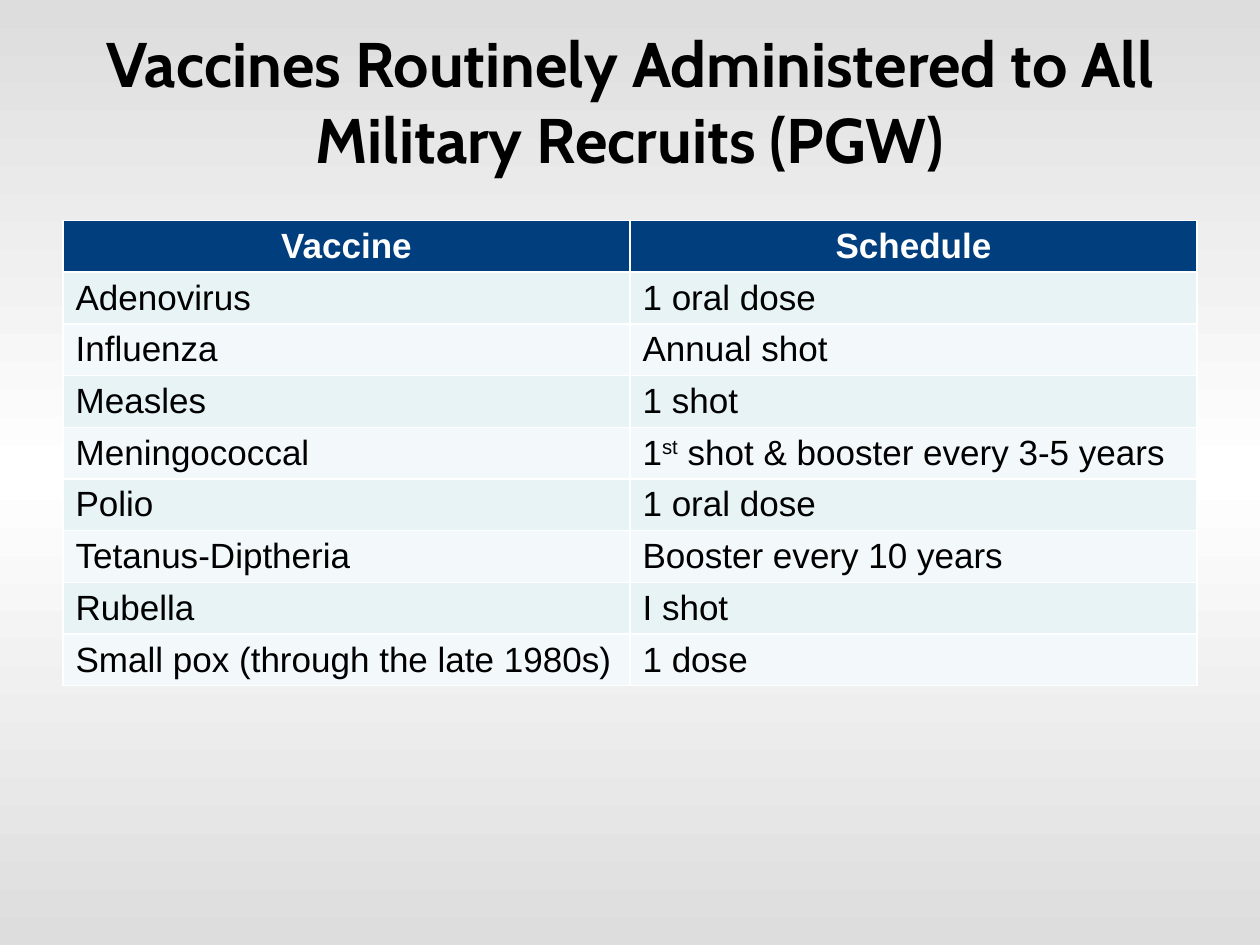
"""Build the slide on vaccines given to military recruits."""
from copy import deepcopy

from pptx import Presentation
from pptx.dml.color import RGBColor
from pptx.enum.text import MSO_ANCHOR as Anchor, PP_ALIGN as Align
from pptx.oxml.ns import qn
from pptx.util import Inches, Pt

TITLE = "Vaccines Routinely Administered to All Military Recruits (PGW)"
ROWS = [
    ("Vaccine", ["Schedule"]),
    ("Adenovirus", ["1 oral dose"]),
    ("Influenza", ["Annual shot"]),
    ("Measles", ["1 shot"]),
    ("Meningococcal", ["1", "st", " shot & booster every 3-5 years"]),
    ("Polio", ["1 oral dose"]),
    ("Tetanus-Diptheria", ["Booster every 10 years"]),
    ("Rubella", ["I shot"]),
    ("Small pox (through the late 1980s)", ["1 dose"]),
]
BLACK = RGBColor(0x00, 0x00, 0x00)
WHITE = RGBColor(0xFF, 0xFF, 0xFF)
GRAY = RGBColor(0xDD, 0xDD, 0xDD)
NAVY = RGBColor(0x00, 0x3E, 0x7E)
BANDS = [RGBColor(0xF3, 0xF9, 0xFA), RGBColor(0xE7, 0xF3, 0xF4)]
WIDE, HIGH = Inches(10), Inches(7.5)
EDGE = int(WIDE * 0.05)
SPAN = WIDE - 2 * EDGE
ROW = Inches(0.41)


def style(font, name, size, color, bold):
    font.name, font.size, font.bold = name, Pt(size), bold
    font.color.rgb = color


def paint(slide):
    fill = slide.background.fill
    fill.gradient()
    fill.gradient_angle = 90
    first = slide.element.find(".//" + qn("a:gs"))
    first.addnext(deepcopy(first))
    for stop, pos, color in zip(fill.gradient_stops, (0, 0.5, 1), (GRAY, WHITE, GRAY)):
        stop.position = pos
        stop.color.rgb = color


def head(slide):
    title = slide.shapes.title
    title.left, title.top = EDGE, Inches(0.17)
    title.width, title.height = SPAN, Inches(1.25)
    frame = title.text_frame
    frame.text = TITLE
    frame.word_wrap = True
    frame.vertical_anchor = Anchor.MIDDLE
    para = frame.paragraphs[0]
    para.alignment = Align.CENTER
    style(para.runs[0].font, "Cabin", 36, BLACK, True)


def write(cell, parts, top, fill):
    cell.fill.solid()
    cell.fill.fore_color.rgb = fill
    para = cell.text_frame.paragraphs[0]
    para.alignment = Align.CENTER if top else Align.LEFT
    for part in parts:
        run = para.add_run()
        run.text = part
        style(run.font, "Arial", 20, WHITE if top else BLACK, top)
        if part == "st":
            run._r.get_or_add_rPr().set("baseline", "30000")


def grid(slide):
    table = slide.shapes.add_table(
        len(ROWS), 2, EDGE, Inches(1.75), SPAN, ROW * len(ROWS)
    ).table
    for i, (name, plan) in enumerate(ROWS):
        fill = BANDS[i % 2] if i else NAVY
        for j, parts in enumerate(([name], plan)):
            write(table.cell(i, j), parts, i == 0, fill)


def main():
    deck = Presentation()
    deck.slide_width, deck.slide_height = WIDE, HIGH
    slide = deck.slides.add_slide(deck.slide_layouts[5])
    paint(slide)
    head(slide)
    grid(slide)
    deck.save("out.pptx")


if __name__ == "__main__":
    main()
